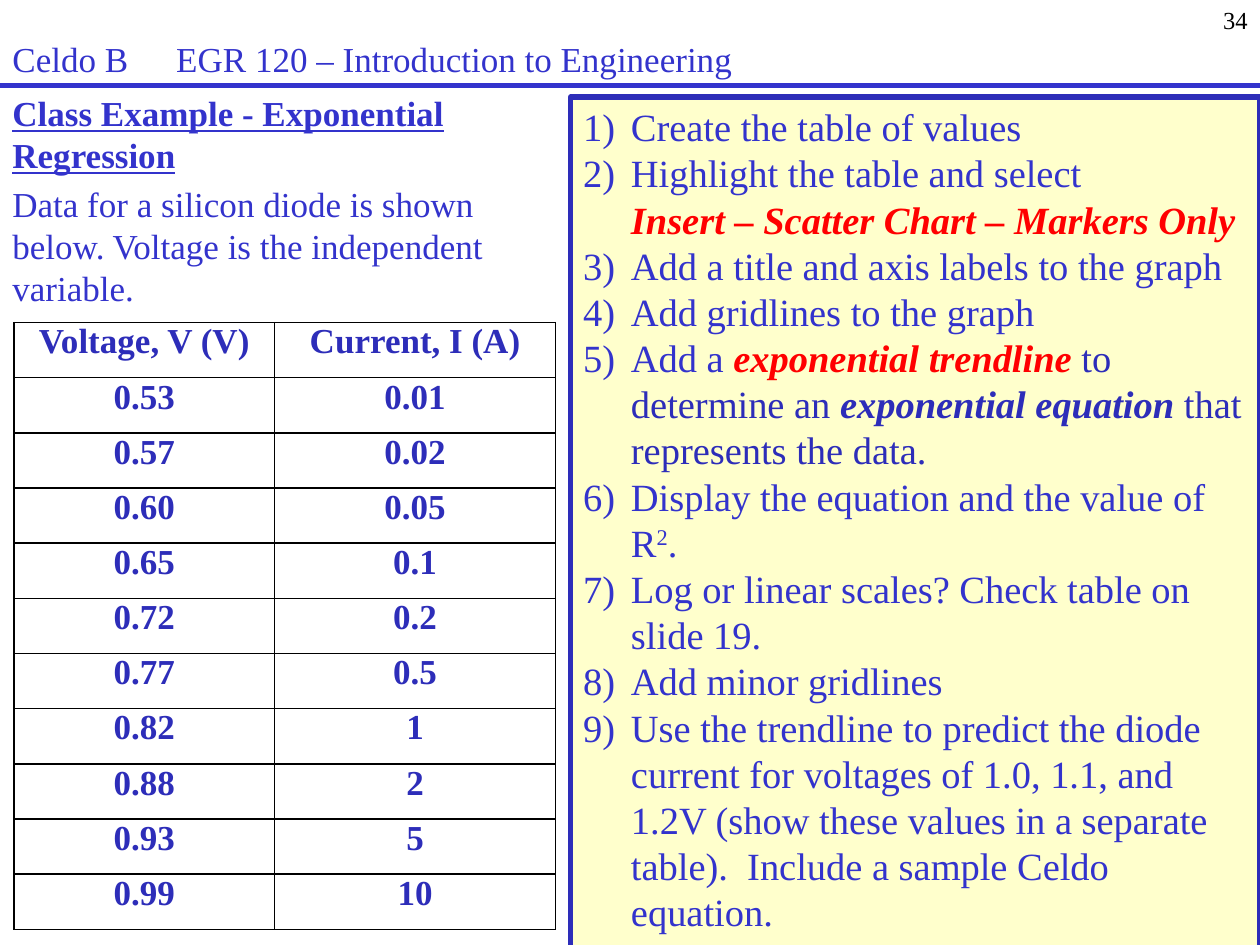
"""Build a class slide on exponential regression with a data table and a list of steps."""
from lxml import etree
from pptx import Presentation
from pptx.dml.color import RGBColor
from pptx.enum.shapes import MSO_CONNECTOR, MSO_SHAPE
from pptx.enum.text import MSO_ANCHOR, MSO_AUTO_SIZE, PP_ALIGN
from pptx.oxml.ns import qn
from pptx.util import Inches, Pt

RECT = MSO_SHAPE.RECTANGLE
LINE = MSO_CONNECTOR.STRAIGHT
TOP = MSO_ANCHOR.TOP
GROW = MSO_AUTO_SIZE.SHAPE_TO_FIT_TEXT
LEFT, MID, RIGHT = PP_ALIGN.LEFT, PP_ALIGN.CENTER, PP_ALIGN.RIGHT

BLUE, NAVY, RED = "3333CC", "2D2DB9", "FF0000"
BLACK, CREAM = "000000", "FFFFCC"

DATA = [
    ("Voltage, V (V)", "Current, I (A)"),
    ("0.53", "0.01"),
    ("0.57", "0.02"),
    ("0.60", "0.05"),
    ("0.65", "0.1"),
    ("0.72", "0.2"),
    ("0.77", "0.5"),
    ("0.82", "1"),
    ("0.88", "2"),
    ("0.93", "5"),
    ("0.99", "10"),
]

STRONG = {"bold": True, "italic": True}
STEPS = [
    (1, [("Create the table of values", {})]),
    (1, [("Highlight the table and select", {})]),
    (None, [("Insert – Scatter Chart – Markers Only", {"hue": RED, **STRONG})]),
    (3, [("Add a title and axis labels to the graph", {})]),
    (3, [("Add gridlines to the graph", {})]),
    (3, [("Add a ", {}),
         ("exponential trendline ", {"hue": RED, **STRONG}),
         ("to determine an ", {"hue": NAVY}),
         ("exponential equation ", {"hue": NAVY, **STRONG}),
         ("that represents the data.", {"hue": NAVY})]),
    (3, [("Display the equation and the value of R", {}), ("2", {"base": 30}), (".", {})]),
    (3, [("Log or linear scales? Check table on slide 19.", {})]),
    (3, [("Add minor gridlines", {})]),
    (3, [("Use the trendline to predict the diode current for voltages of 1.0, 1.1, and 1.2V "
          "(show these values in a separate table).  Include a sample Celdo equation.", {})]),
]


def color(code):
    return RGBColor.from_string(code)


class Deck:
    """Hold the style and the current slide."""

    def __init__(self):
        self.font = "Times New Roman"
        self.prs = Presentation()
        self.prs.slide_width, self.prs.slide_height = Inches(10), Inches(7.5)
        self.slide = self.prs.slides.add_slide(self.prs.slide_layouts[6])

    def style(self, run, size, hue=BLUE, bold=False, italic=False, under=False, base=0):
        font = run.font
        font.name, font.size, font.color.rgb = self.font, Pt(size), color(hue)
        font.bold, font.italic, font.underline = bold, italic, under
        if base:
            run._r.get_or_add_rPr().set("baseline", str(base * 1000))

    def text(self, box, lines, size=20, align=LEFT, before=0, tab=None):
        shape = self.slide.shapes.add_textbox(*map(Inches, box))
        frame = shape.text_frame
        frame.word_wrap = True
        frame.text = "\n".join(words for words, _ in lines)
        for para, (_, look) in zip(frame.paragraphs, lines):
            para.alignment, para.space_before = align, Pt(before)
            if tab:
                stops = etree.SubElement(para._p.get_or_add_pPr(), qn("a:tabLst"))
                etree.SubElement(stops, qn("a:tab"), pos=str(Inches(tab)), algn="l")
            for run in para.runs:
                self.style(run, size, **look)

    def rule(self, start, end, hue, width):
        line = self.slide.shapes.add_connector(LINE, *map(Inches, start + end))
        line.line.color.rgb, line.line.width = color(hue), Pt(width)
        etree.SubElement(line._element.spPr, qn("a:effectLst"))

    def steps(self, box, items, size):
        shape = self.slide.shapes.add_shape(RECT, *map(Inches, box))
        shape.shadow.inherit = False
        shape.fill.solid()
        shape.fill.fore_color.rgb = color(CREAM)
        shape.line.color.rgb, shape.line.width = color(NAVY), Pt(3)
        frame = shape.text_frame
        frame.word_wrap, frame.auto_size, frame.vertical_anchor = True, GROW, TOP
        frame.text = "\n" * (len(items) - 1)
        for para, (start, parts) in zip(frame.paragraphs, items):
            para.alignment = LEFT
            props = para._p.get_or_add_pPr()
            props.set("marL", str(Inches(0.38)))
            props.set("indent", str(Inches(-0.38 if start else 0)))
            if start:
                etree.SubElement(props, qn("a:buFont"), typeface="+mj-lt")
                etree.SubElement(props, qn("a:buAutoNum"), type="arabicParenR", startAt=str(start))
            for words, look in parts:
                run = para.add_run()
                run.text = words
                self.style(run, size, **look)

    def border(self, cell):
        props = cell._tc.get_or_add_tcPr()
        for spot, side in enumerate(("a:lnL", "a:lnR", "a:lnT", "a:lnB")):
            edge = etree.Element(qn(side), w=str(Pt(1)))
            fill = etree.SubElement(edge, qn("a:solidFill"))
            etree.SubElement(fill, qn("a:srgbClr"), val=BLACK)
            props.insert(spot, edge)

    def table(self, box, rows, widths, size):
        table = self.slide.shapes.add_table(len(rows), len(widths), *map(Inches, box)).table
        for col, width in zip(table.columns, widths):
            col.width = Inches(width)
        for row, values in zip(table.rows, rows):
            row.height = Inches(box[3] / len(rows))
            for cell, value in zip(row.cells, values):
                cell.fill.background()
                cell.margin_left = cell.margin_right = Inches(0.07)
                cell.margin_top = cell.margin_bottom = 0
                cell.text_frame.text = value
                para = cell.text_frame.paragraphs[0]
                para.alignment = MID
                self.style(para.runs[0], size, hue=NAVY, bold=True)
                self.border(cell)


def main():
    deck = Deck()
    deck.text((0, 0.68, 4.42, 1.85), [
        ("Class Example - Exponential Regression", {"bold": True, "under": True}),
        ("Data for a silicon diode is shown below. Voltage is the independent variable.", {}),
    ], before=4)
    deck.rule((0, 0.68), (10, 0.68), BLUE, 3)
    deck.text((0, 0.25, 8.58, 0.33), [("Celdo B\tEGR 120 – Introduction to Engineering", {})],
              before=4, tab=1.3)
    deck.steps((4.53, 0.77, 5.47, 6.77), STEPS, 22)
    deck.text((7.92, -0.01, 2.08, 0.5), [("34", {"hue": BLACK})], size=14, align=RIGHT)
    deck.table((0.11, 2.56, 4.3, 4.82), DATA, (2.07, 2.23), 20)
    deck.prs.save("out.pptx")


if __name__ == "__main__":
    main()
